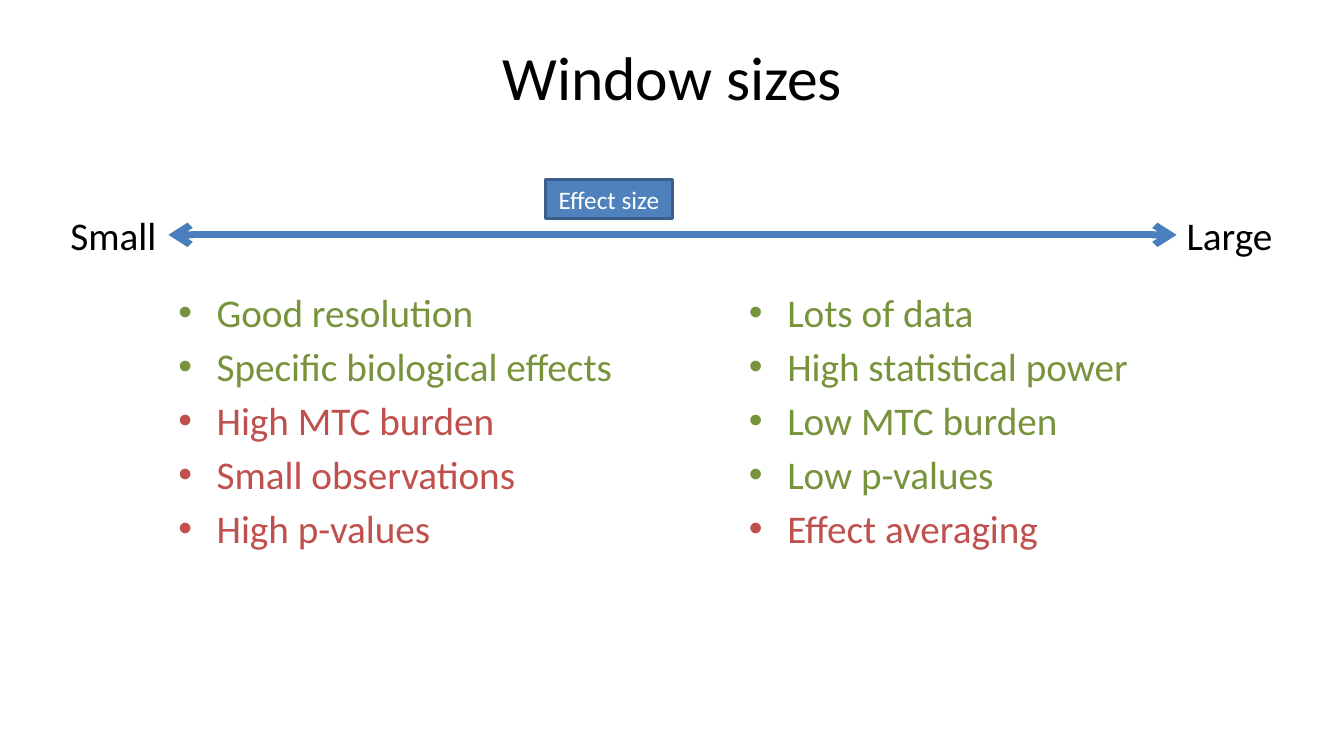
from dataclasses import dataclass

from lxml.etree import SubElement
from pptx import Presentation
from pptx.dml.color import RGBColor
from pptx.enum.shapes import MSO_CONNECTOR, MSO_SHAPE
from pptx.enum.text import MSO_ANCHOR, PP_ALIGN
from pptx.oxml.ns import qn
from pptx.util import Inches, Pt


@dataclass(frozen=True)
class Theme:
    font: str = "Calibri"
    text: str = "000000"
    light: str = "FFFFFF"
    benefit: str = "77933C"
    drawback: str = "C0504D"
    axis: str = "4B7EBC"
    badge: str = "4F81BD"
    badge_edge: str = "3A5F8C"
    title_size: int = 44
    body_size: int = 28
    badge_size: int = 18
    bullet_gap: int = 5


THEME = Theme()


def write(paragraph, text, size=THEME.body_size, color=THEME.text,
          align=PP_ALIGN.LEFT, space_before=0):
    paragraph.alignment = align
    paragraph.space_before = Pt(space_before)
    run = paragraph.add_run()
    run.text = text
    run.font.name = THEME.font
    run.font.size = Pt(size)
    run.font.color.rgb = RGBColor.from_string(color)


def add_text_frame(slide, left, top, width, height, wrap=True, anchor=MSO_ANCHOR.TOP):
    box = slide.shapes.add_textbox(Inches(left), Inches(top), Inches(width), Inches(height))
    frame = box.text_frame
    frame.word_wrap = wrap
    frame.vertical_anchor = anchor
    return frame


def add_title(slide, text):
    title = add_text_frame(slide, 2.17, 0.13, 9, 1.25, anchor=MSO_ANCHOR.MIDDLE)
    write(title.paragraphs[0], text, size=THEME.title_size, align=PP_ALIGN.CENTER)


def add_end_label(slide, text, left):
    label = add_text_frame(slide, left, 2.05, 1.06, 0.57, wrap=False)
    write(label.paragraphs[0], text)


def add_bullets(slide, left, benefits, drawbacks):
    column = add_text_frame(slide, left, 2.81, 5.45, 4.32)
    points = [(text, THEME.benefit) for text in benefits]
    points += [(text, THEME.drawback) for text in drawbacks]
    for index, (text, color) in enumerate(points):
        paragraph = column.add_paragraph() if index else column.paragraphs[0]
        properties = paragraph._p.get_or_add_pPr()
        properties.set("marL", str(Inches(0.38)))
        properties.set("indent", str(Inches(-0.38)))
        SubElement(properties, qn("a:buFont"), typeface="Arial")
        SubElement(properties, qn("a:buChar"), char="•")
        write(paragraph, text, color=color,
              space_before=THEME.bullet_gap if index else 0)


def add_size_axis(slide, left, right, y):
    axis = slide.shapes.add_connector(
        MSO_CONNECTOR.STRAIGHT, Inches(left), Inches(y), Inches(right), Inches(y))
    axis.line.color.rgb = RGBColor.from_string(THEME.axis)
    axis.line.width = Pt(5)
    outline = axis.line._get_or_add_ln()
    for end in ("a:headEnd", "a:tailEnd"):
        SubElement(outline, qn(end), type="arrow")
    SubElement(axis._element.spPr, qn("a:effectLst"))


def add_badge(slide, text):
    badge = slide.shapes.add_shape(
        MSO_SHAPE.RECTANGLE, Inches(5.41), Inches(1.78), Inches(1.26), Inches(0.39))
    badge.shadow.inherit = False
    badge.fill.solid()
    badge.fill.fore_color.rgb = RGBColor.from_string(THEME.badge)
    badge.line.color.rgb = RGBColor.from_string(THEME.badge_edge)
    badge.line.width = Pt(2)
    badge.text_frame.word_wrap = True
    badge.text_frame.vertical_anchor = MSO_ANCHOR.MIDDLE
    write(badge.text_frame.paragraphs[0], text, size=THEME.badge_size,
          color=THEME.light, align=PP_ALIGN.CENTER)


def main():
    deck = Presentation()
    deck.slide_width, deck.slide_height = Inches(13.33), Inches(7.5)
    slide = deck.slides.add_slide(deck.slide_layouts[6])

    add_title(slide, "Window sizes")
    add_bullets(slide, 1.67,
                benefits=["Good resolution", "Specific biological effects"],
                drawbacks=["High MTC burden", "Small observations", "High p-values"])
    add_bullets(slide, 7.33,
                benefits=["Lots of data", "High statistical power",
                          "Low MTC burden", "Low p-values"],
                drawbacks=["Effect averaging"])
    add_size_axis(slide, 1.67, 11.67, 2.33)
    add_end_label(slide, "Small", 0.6)
    add_end_label(slide, "Large", 11.67)
    add_badge(slide, "Effect size")

    deck.save("out.pptx")


if __name__ == "__main__":
    main()
